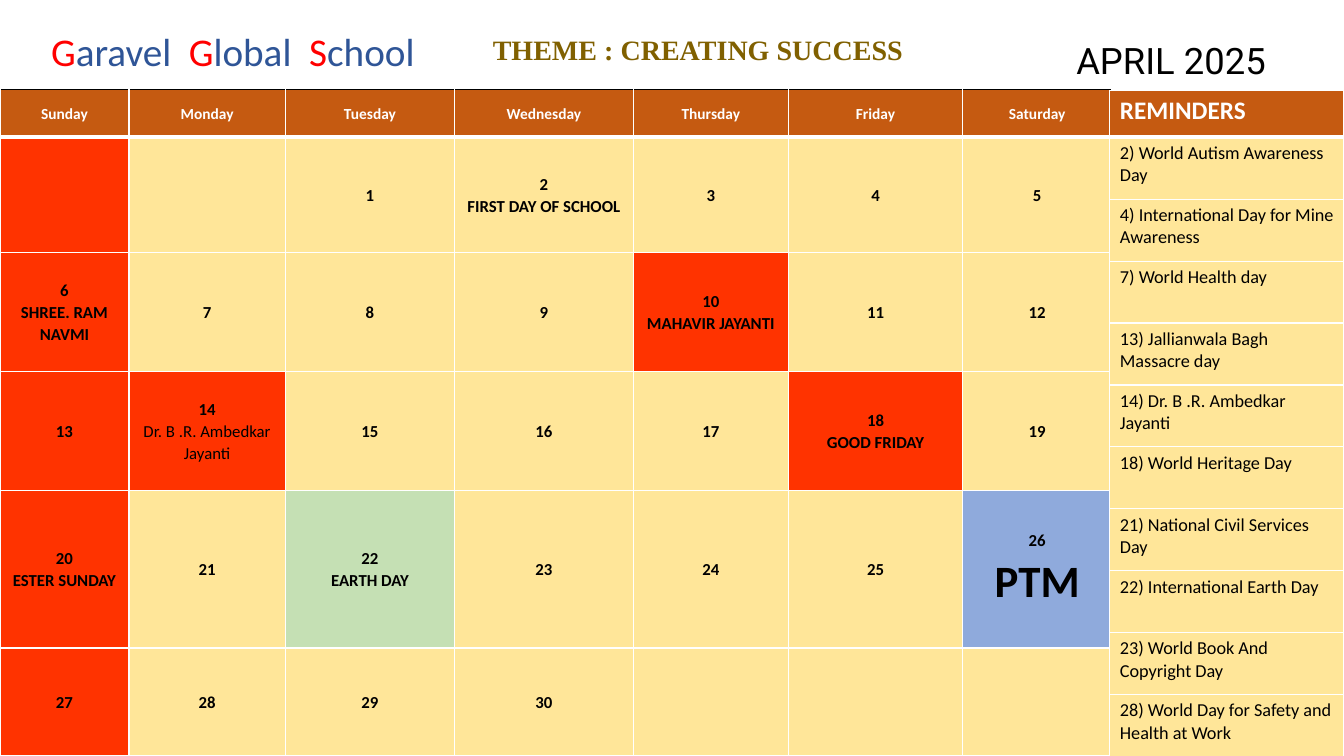
from dataclasses import dataclass

from lxml.etree import SubElement
from pptx import Presentation
from pptx.dml.color import RGBColor
from pptx.enum.shapes import MSO_SHAPE
from pptx.enum.text import MSO_ANCHOR, PP_ALIGN
from pptx.oxml.ns import qn
from pptx.util import Cm, Pt


@dataclass(frozen=True)
class Theme:
    white: str = "FFFFFF"
    black: str = "000000"
    head: str = "C55A11"
    sand: str = "FFE699"
    red: str = "FF3300"
    green: str = "C5E0B4"
    blue: str = "8FAADC"
    gold: str = "806000"
    cap: str = "FF0000"
    navy: str = "2F5597"
    body: str = "Calibri"
    serif: str = "Times New Roman"
    sans: str = "Roboto"
    week: int = 11
    day: int = 12
    note: int = 13
    side: int = 18
    motto: int = 20
    month: int = 26
    school: int = 28
    big: int = 32


T = Theme()
WEEK = ["Sunday", "Monday", "Tuesday", "Wednesday", "Thursday", "Friday", "Saturday"]
COLS = [3.25, 3.94, 4.27, 4.5, 3.91, 4.39, 3.76]
ROWS = [1.19, 2.92, 3, 3, 3.96, 2.72]
LAST = 30
EVENTS = {
    2: "FIRST DAY OF SCHOOL",
    6: "SHREE. RAM NAVMI",
    10: "MAHAVIR JAYANTI",
    14: "Dr. B .R. Ambedkar Jayanti",
    18: "GOOD FRIDAY",
    20: "ESTER SUNDAY",
    22: "EARTH DAY",
    26: "PTM",
}
FILLS = {10: T.red, 14: T.red, 18: T.red, 22: T.green, 26: T.blue}
NOTES = [
    "2) World Autism Awareness Day",
    "4) International Day for Mine Awareness",
    "7) World Health day",
    "13) Jallianwala Bagh Massacre day",
    "14) Dr. B .R. Ambedkar Jayanti",
    "18) World Heritage Day",
    "21) National Civil Services Day",
    "22) International Earth Day",
    "23) World Book And Copyright Day",
    "28) World Day for Safety and Health at Work",
]


def add_run(para, text, size, color=T.black, bold=False, face=T.body):
    run = para.add_run()
    run.text = text
    font = run.font
    font.size, font.bold, font.name = Pt(size), bold, face
    font.color.rgb = RGBColor.from_string(color)
    return run


def add_edge(cell, side, width, color=T.white):
    line = SubElement(cell._tc.get_or_add_tcPr(), qn(f"a:ln{side}"), w=str(Pt(width)))
    fill = SubElement(line, qn("a:solidFill"))
    SubElement(fill, qn("a:srgbClr"), val=color)


def paint(cell, color, top=None):
    """Give a cell its edges and fill; a top colour marks a header cell."""
    add_edge(cell, "L", 1)
    add_edge(cell, "R", 1)
    if top:
        add_edge(cell, "T", 1, top)
    add_edge(cell, "B", 3 if top else 1)
    cell.fill.solid()
    cell.fill.fore_color.rgb = RGBColor.from_string(color)


def add_grid(slide, left, top, cols, rows):
    frame = slide.shapes.add_table(len(rows), len(cols), Cm(left), Cm(top),
                                   Cm(sum(cols)), Cm(sum(rows)))
    grid = frame.table
    grid.horz_banding = False
    for col, width in zip(grid.columns, cols):
        col.width = Cm(width)
    for row, height in zip(grid.rows, rows):
        row.height = Cm(height)
    return grid


def center(cell):
    cell.vertical_anchor = MSO_ANCHOR.MIDDLE
    cell.margin_left = cell.margin_right = Cm(0.18)
    cell.margin_top = cell.margin_bottom = 0


def add_line(cell, text, size, color=T.black, bold=True):
    """Write a centred line, in the first paragraph while that is empty."""
    frame = cell.text_frame
    para = frame.add_paragraph() if frame.text else frame.paragraphs[0]
    para.alignment, para.line_spacing = PP_ALIGN.CENTER, 1.07
    add_run(para, text, size, color, bold)


def add_month(slide):
    grid = add_grid(slide, 0, 2.26, COLS, ROWS)
    for col, name in enumerate(WEEK):
        cell = grid.cell(0, col)
        paint(cell, T.head, T.black)
        center(cell)
        add_line(cell, name, T.week, T.white)
        for row in range(1, len(ROWS)):
            day = (row - 1) * len(WEEK) + col - 1
            add_day(grid.cell(row, col), day, T.sand if col else T.red)


def add_day(cell, day, color):
    paint(cell, FILLS.get(day, color))
    center(cell)
    if 1 <= day <= LAST:
        add_line(cell, str(day), T.day)
    if day in EVENTS:
        size = T.big if EVENTS[day] == "PTM" else T.day
        add_line(cell, EVENTS[day], size, bold=EVENTS[day].isupper())


def add_notes(slide):
    grid = add_grid(slide, 27.97, 2.29, [5.9], [1.17] + [1.56] * len(NOTES))
    head = grid.cell(0, 0)
    paint(head, T.head, T.white)
    add_run(head.text_frame.paragraphs[0], "REMINDERS", T.side, T.white, True)
    for row, note in enumerate(NOTES, 1):
        cell = grid.cell(row, 0)
        paint(cell, T.sand)
        add_run(cell.text_frame.paragraphs[0], note, T.note)


def add_box(slide, left, top, width, height, wrap=True):
    box = slide.shapes.add_textbox(Cm(left), Cm(top), Cm(width), Cm(height))
    box.text_frame.word_wrap = wrap
    return box.text_frame.paragraphs[0]


def add_school(slide):
    para = add_box(slide, 1.04, 0.56, 10.36, 1.63)
    for pos, word in enumerate(["Garavel", "Global", "School"]):
        if pos:
            gap = add_run(para, " ", T.school)
            gap.font._element.set("spc", "630")
        add_run(para, word[0], T.school, T.cap)
        add_run(para, word[1:], T.school, T.navy)


def add_title(slide):
    box = slide.shapes.add_shape(MSO_SHAPE.RECTANGLE, Cm(26.11), Cm(0.76),
                                 Cm(6.81), Cm(1.4))
    box.shadow.inherit = False
    box.fill.solid()
    box.fill.fore_color.rgb = RGBColor.from_string(T.white)
    box.line.fill.background()
    box.text_frame.vertical_anchor = MSO_ANCHOR.TOP
    para = box.text_frame.paragraphs[0]
    para.alignment, para.line_spacing = PP_ALIGN.CENTER, 1.07
    para.space_after = Pt(8)
    add_run(para, "APRIL 2025", T.month, face=T.sans)


def main():
    deck = Presentation()
    deck.slide_width, deck.slide_height = Cm(33.87), Cm(19.05)
    slide = deck.slides.add_slide(deck.slide_layouts[6])
    add_month(slide)
    add_title(slide)
    motto = add_box(slide, 12.17, 0.69, 10.95, 1.12, wrap=False)
    add_run(motto, "THEME : CREATING SUCCESS", T.motto, T.gold, True, T.serif)
    add_school(slide)
    add_notes(slide)
    deck.save("out.pptx")


if __name__ == "__main__":
    main()
